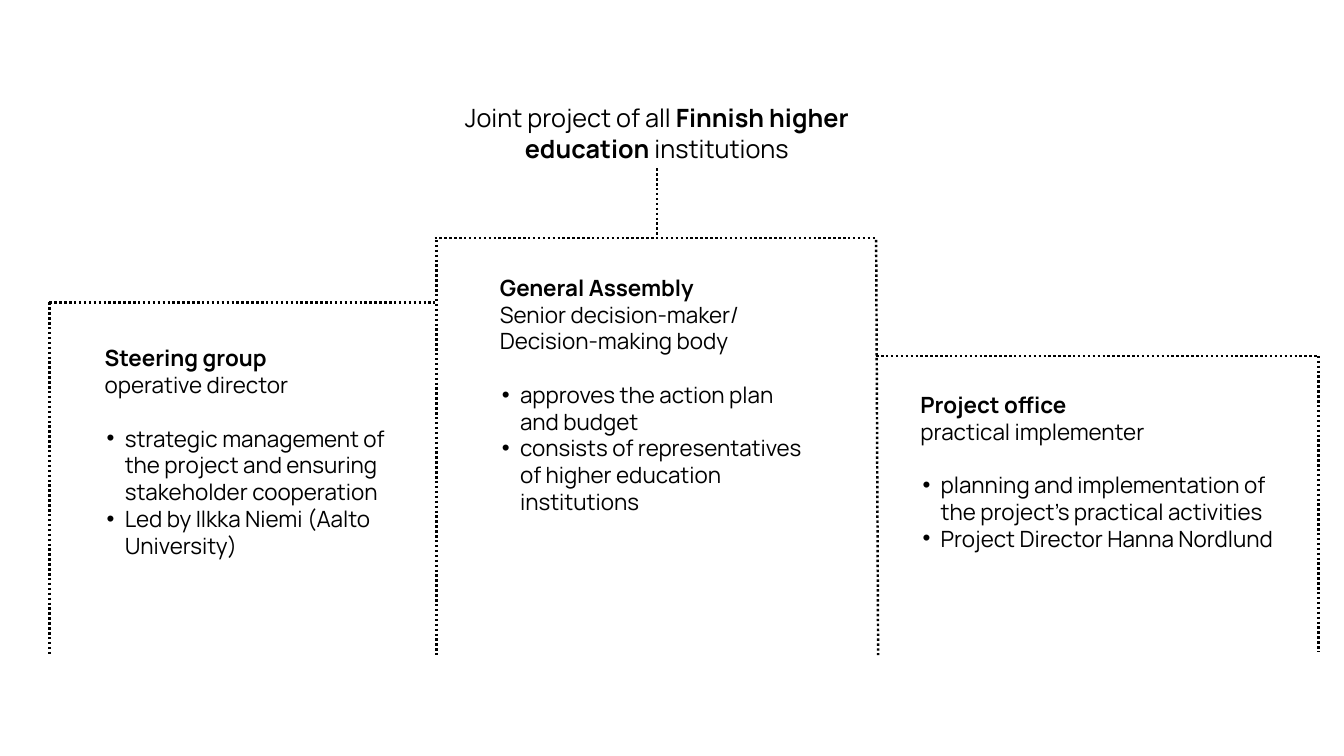
from lxml import etree
from pptx import Presentation
from pptx.dml.color import RGBColor
from pptx.enum.dml import MSO_LINE
from pptx.enum.shapes import MSO_CONNECTOR
from pptx.enum.text import PP_ALIGN
from pptx.oxml.ns import qn
from pptx.util import Inches, Pt

STRAIGHT = MSO_CONNECTOR.STRAIGHT
DOTTED = MSO_LINE.ROUND_DOT  # written as sysDot
LEFT, CENTER = PP_ALIGN.LEFT, PP_ALIGN.CENTER
BOTTOM_SIDE = 2

THEME = {
    "ink": RGBColor(0, 0, 0),
    "font": "Manrope",
    "title_size": 18,
    "title_pitch": 22.1,
    "body_size": 16,
    "body_pitch": 19.1,
    "line_width": Pt(1.75),
    "bullet_indent": Inches(0.2),
    "bullet_hang": Inches(-0.18),
}

presentation = Presentation()
presentation.slide_width = Inches(13.33)
presentation.slide_height = Inches(7.5)
slide = presentation.slides.add_slide(presentation.slide_layouts[6])

# The grid has 100 columns and 100 rows
COLUMN = presentation.slide_width / 100
ROW = presentation.slide_height / 100


def add_text(runs, bullets=(), *, at, size, pitch, align=LEFT, inset=True):
    """Runs are (text, bold) pairs of the first paragraph; bullets follow a line below."""
    left, top, width, height = at
    box = slide.shapes.add_textbox(
        round(left * COLUMN), round(top * ROW), round(width * COLUMN), round(height * ROW))
    frame = box.text_frame
    frame.word_wrap = True
    if not inset:
        frame.margin_left = frame.margin_right = frame.margin_top = frame.margin_bottom = 0
    for index, content in enumerate([runs] + [[(text, False)] for text in bullets]):
        paragraph = frame.paragraphs[0] if index == 0 else frame.add_paragraph()
        paragraph.alignment = align
        paragraph.line_spacing = Pt(pitch)
        if index == 0 and bullets:
            paragraph.space_after = Pt(pitch)
        if index > 0:
            properties = paragraph._p.get_or_add_pPr()
            properties.set("marL", str(THEME["bullet_indent"]))
            properties.set("indent", str(THEME["bullet_hang"]))
            etree.SubElement(properties, qn("a:buFont"), typeface="Arial")
            etree.SubElement(properties, qn("a:buChar"), char="•")
        for text, bold in content:
            for number, part in enumerate(text.split("\n")):
                if number:
                    paragraph.add_line_break()
                if part:
                    run = paragraph.add_run()
                    run.text = part
                    run.font.name = THEME["font"]
                    run.font.size = Pt(size)
                    run.font.bold = bold
                    run.font.color.rgb = THEME["ink"]
    return box


def add_dotted_line(x1, y1, x2, y2):
    line = slide.shapes.add_connector(
        STRAIGHT, round(x1 * COLUMN), round(y1 * ROW), round(x2 * COLUMN), round(y2 * ROW))
    line.line.color.rgb = THEME["ink"]
    line.line.width = THEME["line_width"]
    line.line.dash_style = DOTTED
    etree.SubElement(line._element.spPr, qn("a:effectLst"))
    return line


# Title and the stem below it
title = add_text(
    [("Joint project of all ", False), ("Finnish higher education", True),
     (" institutions", False)],
    at=(32.33, 12.8, 33.08, 9.47), align=CENTER,
    size=THEME["title_size"], pitch=THEME["title_pitch"])
stem = add_dotted_line(48.87, 22.27, 48.87, 31.47)
stem.begin_connect(title, BOTTOM_SIDE)

# Frames: tops, then sides
for left, right, top in [(3.68, 32.33, 40), (32.33, 65.19, 31.47), (65.19, 98.12, 47.07)]:
    add_dotted_line(left, top, right, top)
for x_top, top, x_bottom, bottom in [
        (3.68, 40, 3.68, 86.67), (32.48, 31.73, 32.48, 86.67),
        (65.19, 31.73, 65.34, 86.67), (98.12, 47.07, 98.12, 86.13)]:
    add_dotted_line(x_top, top, x_bottom, bottom)

# Text of the three bodies
BODIES = [
    ("Steering group", "operative director",
     ["strategic management of the project and ensuring stakeholder cooperation",
      "Led by Ilkka Niemi (Aalto University)"],
     (7.05, 44.93, 24.16, 37.2), True),
    ("General Assembly", "Senior decision-maker/\nDecision-making body",
     ["approves the action plan and budget",
      "consists of representatives of higher education institutions"],
     (36.46, 35.6, 24.16, 37.2), True),
    ("Project office", "practical implementer",
     ["planning and implementation of the project's practical activities",
      "Project Director Hanna Nordlund"],
     (68.49, 51.73, 27.83, 38.13), False),
]
for name, role, duties, place, inset in BODIES:
    add_text([(name + "\n", True), (role, False)], duties, at=place, inset=inset,
             size=THEME["body_size"], pitch=THEME["body_pitch"])

presentation.save("out.pptx")
